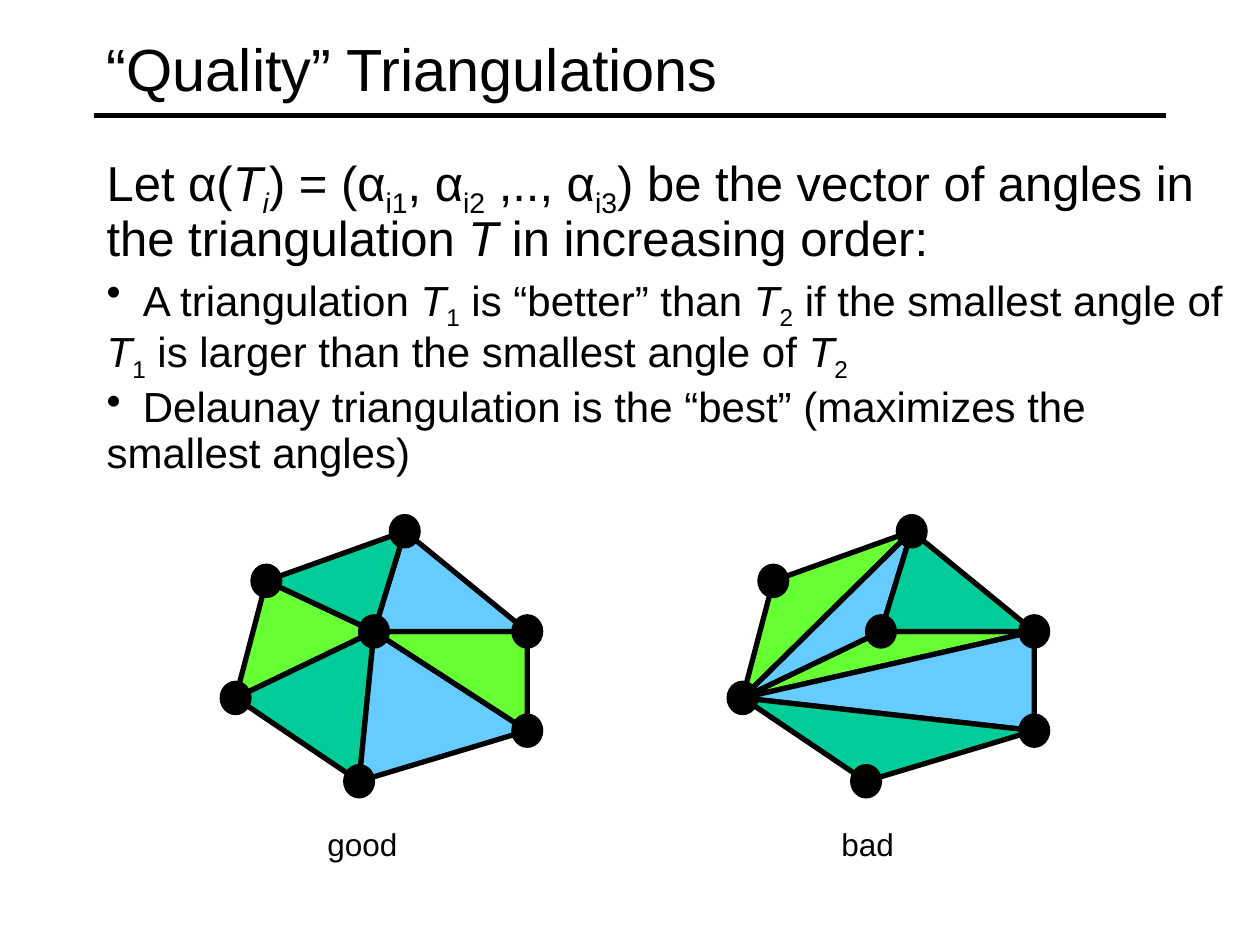
from lxml.etree import SubElement
from pptx import Presentation
from pptx.dml.color import RGBColor
from pptx.enum.shapes import MSO_CONNECTOR as Link, MSO_SHAPE as Shape
from pptx.enum.text import MSO_ANCHOR as Anchor, MSO_AUTO_SIZE as Fit, PP_ALIGN as Align
from pptx.oxml.ns import qn
from pptx.util import Cm, Pt

BLACK, LIME, TEAL, SKY = "000000", "66FF33", "00CC99", "66CCFF"
NODES = {
    "top": (8.16, 10.71), "hub": (7.54, 12.73), "west": (5.37, 11.71),
    "east": (10.63, 12.73), "left": (4.75, 14.07), "base": (7.24, 15.75),
    "right": (10.63, 14.73),
}
GOOD = [
    (LIME, "west hub left"), (TEAL, "left hub base"), (SKY, "base hub right"),
    (LIME, "right hub east"), (SKY, "east hub top"), (TEAL, "top hub west"),
]
BAD = [
    (LIME, "left hub east"), (SKY, "left right east"), (TEAL, "left right base"),
    (LIME, "left west top"), (SKY, "left top hub"), (TEAL, "top hub east"),
]
INTRO = [
    ("Let α(", ""), ("T", "i"), ("i", "is"), (") = (α", ""), ("i1", "s"),
    (", α", ""), ("i2", "s"), (" ,.., α", ""), ("i3", "s"),
    (") be the vector of angles in the triangulation ", ""),
    ("T ", "i"), ("in increasing order:", ""),
]
BETTER = [
    ("\tA triangulation ", ""), ("T", "i"), ("1", "s"),
    (" is “better” than ", ""), ("T", "i"), ("2", "s"),
    (" if the smallest angle of ", ""), ("T", "i"), ("1", "s"),
    (" is larger than the smallest angle of ", ""), ("T", "i"), ("2", "s"),
]
BEST = [("\tDelaunay triangulation is the “best” (maximizes the smallest angles)", "")]


def color(code):
    """Turn a hex string into a colour."""
    return RGBColor.from_string(code)


def style(font, size):
    """Set the typeface, size and colour of a font."""
    font.name, font.size = "Arial", Pt(size)
    font.color.rgb = color(BLACK)


def paint(shape, fill, width):
    """Give a shape a plain fill and a black outline."""
    shape.shadow.inherit = False
    shape.fill.solid()
    shape.fill.fore_color.rgb = color(fill)
    shape.line.color.rgb = color(BLACK)
    shape.line.width = Pt(width)


def add_title(slide, text):
    """Place the title and the rule under it."""
    title = slide.shapes.title
    title.left, title.top, title.width, title.height = Cm(1.9), Cm(0.2), Cm(21.6), Cm(2.34)
    frame = title.text_frame
    frame.text = text
    frame.vertical_anchor = Anchor.MIDDLE
    para = frame.paragraphs[0]
    para.alignment = Align.LEFT
    style(para.runs[0].font, 34)
    rule = slide.shapes.add_connector(Link.STRAIGHT, Cm(1.9), Cm(2.33), Cm(23.5), Cm(2.33))
    rule.line.color.rgb = color(BLACK)
    rule.line.width = Pt(3)
    SubElement(rule._element.spPr, qn("a:effectLst"))


def add_bullet(para):
    """Add a bullet, with a tab stop for the first line only."""
    props = para._p.get_or_add_pPr()
    props.set("marL", "0")
    props.set("indent", "0")
    SubElement(props, qn("a:buChar"), char="•")
    tabs = SubElement(props, qn("a:tabLst"))
    SubElement(tabs, qn("a:tab"), pos=str(Cm(0.73)), algn="l")


def add_para(para, parts, size):
    """Fill a paragraph with plain, italic and subscript runs."""
    para.line_spacing = 0.9
    para.space_before = Pt(size * 0.2)
    for text, look in parts:
        run = para.add_run()
        run.text = text
        style(run.font, size)
        run.font.italic = "i" in look
        if "s" in look:
            run._r.get_or_add_rPr().set("baseline", "-25000")


def add_body(slide):
    """Write the definition and its two bullets."""
    box = slide.shapes.add_textbox(Cm(1.9), Cm(2.97), Cm(23.5), Cm(6.55))
    frame = box.text_frame
    frame.word_wrap = True
    add_para(frame.paragraphs[0], INTRO, 28)
    for parts in (BETTER, BEST):
        para = frame.add_paragraph()
        add_para(para, parts, 24)
        add_bullet(para)


def add_mesh(slide, faces, shift):
    """Draw the triangles and nodes of one triangulation."""
    shapes = slide.shapes.add_group_shape().shapes
    spots = {name: (Cm(x + shift), Cm(y)) for name, (x, y) in NODES.items()}
    for fill, names in faces:
        first, *rest = [spots[name] for name in names.split()]
        path = shapes.build_freeform(*first)
        path.add_line_segments(rest, close=True)
        paint(path.convert_to_shape(), fill, 3)
    wide, high = Cm(0.62), Cm(0.67)
    for x, y in spots.values():
        dot = shapes.add_shape(Shape.OVAL, x - wide // 2, y - high // 2, wide, high)
        paint(dot, BLACK, 0.75)


def add_label(slide, text, left, width):
    """Write a caption below a triangulation."""
    box = slide.shapes.add_textbox(Cm(left), Cm(16.51), Cm(width), Cm(1.02))
    frame = box.text_frame
    frame.text = text
    frame.word_wrap = False
    frame.auto_size = Fit.SHAPE_TO_FIT_TEXT
    style(frame.paragraphs[0].runs[0].font, 18)


def main():
    """Build the slide and save it."""
    deck = Presentation()
    deck.slide_width, deck.slide_height = Cm(25.4), Cm(19.05)
    slide = deck.slides.add_slide(deck.slide_layouts[5])
    add_title(slide, "“Quality” Triangulations")
    add_body(slide)
    add_mesh(slide, GOOD, 0)
    add_mesh(slide, BAD, 10.22)
    add_label(slide, "good", 6.35, 1.93)
    add_label(slide, "bad", 16.71, 1.57)
    deck.save("out.pptx")


if __name__ == "__main__":
    main()
